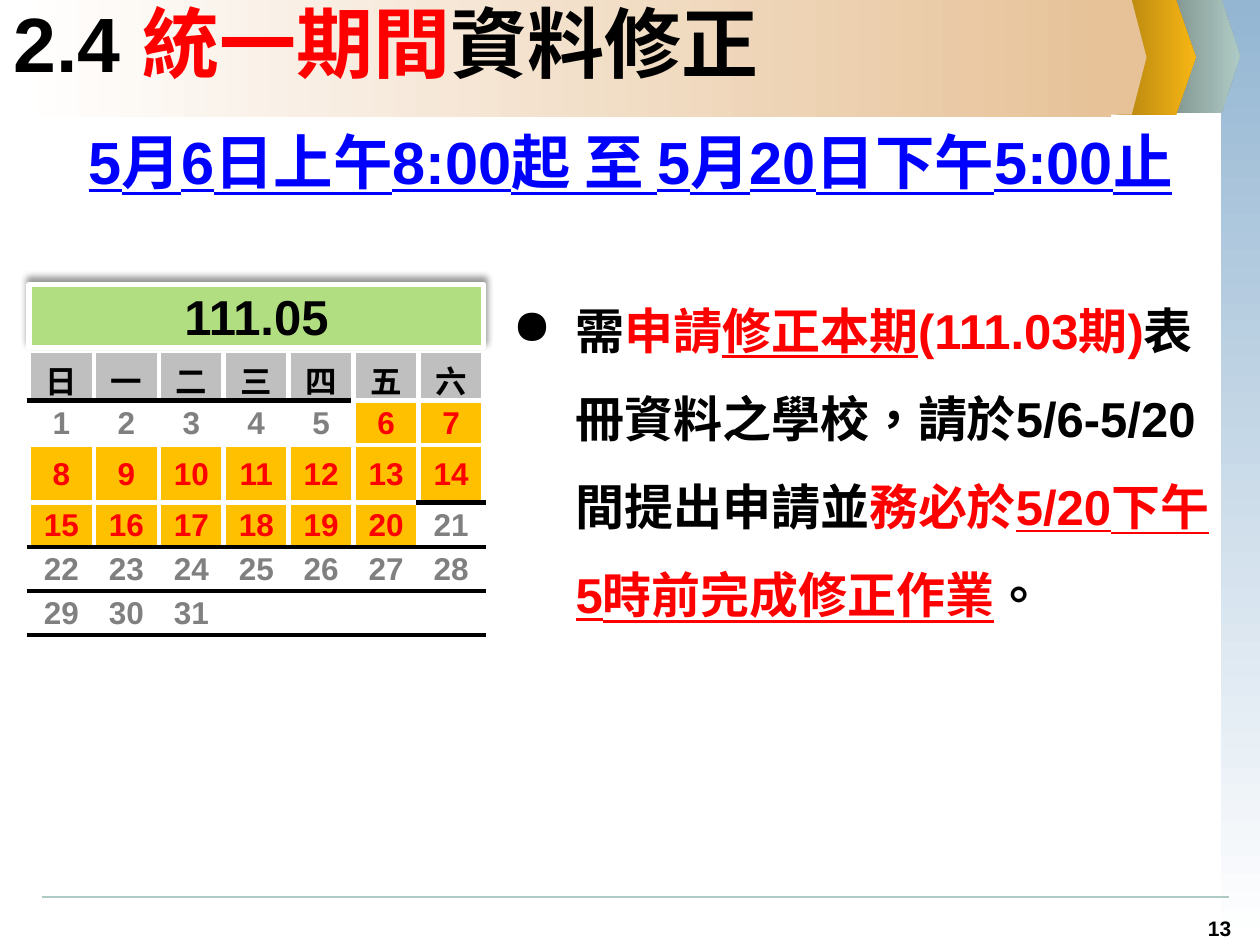
from lxml import etree
from pptx import Presentation
from pptx.dml.color import RGBColor
from pptx.enum.lang import MSO_LANGUAGE_ID as Lang
from pptx.enum.shapes import MSO_CONNECTOR as Connector, MSO_SHAPE as Shape
from pptx.enum.text import MSO_ANCHOR as Anchor, MSO_AUTO_SIZE as AutoSize, PP_ALIGN as Align
from pptx.oxml import parse_xml
from pptx.oxml.ns import nsdecls, qn
from pptx.util import Inches, Pt

BLACK, WHITE, RED, BLUE, GRAY = "000000", "FFFFFF", "FF0000", "0000FF", "808080"
PEACH, SAGE, AMBER, SILVER = "E7C298", "AFCAC4", "FFC000", "BFBFBF"
LATIN, CJK = "Arial", "Noto Sans CJK SC"


def rgb(color):
    return RGBColor.from_string(color)


def inches(box):
    return [Inches(length) for length in box]


def style_run(run, size, color, underline=False, latin=LATIN):
    font = run.font
    font.size, font.bold, font.underline = Pt(size), True, underline
    font.name, font.color.rgb = latin, rgb(color)
    font.language_id = Lang.TRADITIONAL_CHINESE
    east_asian = etree.SubElement(font._element, qn("a:ea"))
    east_asian.set("typeface", CJK)


def write(paragraph, pieces, size, align=Align.LEFT):
    """Add runs given as (text, color, underline)."""
    paragraph.alignment = align
    for words, color, underline in pieces:
        run = paragraph.add_run()
        run.text = words
        style_run(run, size, color, underline)


def add_text(slide, box, pieces, size, align=Align.LEFT, anchor=Anchor.TOP, grow=False):
    frame = slide.shapes.add_textbox(*inches(box)).text_frame
    frame.word_wrap, frame.vertical_anchor = True, anchor
    frame.auto_size = AutoSize.SHAPE_TO_FIT_TEXT if grow else AutoSize.NONE
    write(frame.paragraphs[0], pieces, size, align)
    return frame.paragraphs[0]


def add_panel(slide, box, colors, kind=Shape.RECTANGLE, angle=0):
    """Borderless shape with one solid color or a two-color gradient."""
    panel = slide.shapes.add_shape(kind, *inches(box))
    panel.shadow.inherit = False
    panel.line.fill.background()
    if kind == Shape.PENTAGON:
        panel.adjustments[0] = 0.25
    if len(colors) == 1:
        panel.fill.solid()
        panel.fill.fore_color.rgb = rgb(colors[0])
    else:
        panel.fill.gradient()
        panel.fill.gradient_angle = angle
        for stop, color, position in zip(panel.fill.gradient_stops, colors, (0, 1)):
            stop.color.rgb, stop.position = rgb(color), position
    return panel


def add_backdrop(slide):
    # Side band and footer rule
    add_panel(slide, (9.69, 0, 0.31, 7.5), ("94B6D2", WHITE), angle=270)
    rule = slide.shapes.add_connector(Connector.STRAIGHT, *inches((0.33, 7.12, 9.75, 7.12)))
    rule.line.color.rgb, rule.line.width = rgb(SAGE), Pt(0.75)
    etree.SubElement(rule._element.spPr, qn("a:effectLst"))
    # Title band ending in arrow-shaped tabs
    add_panel(slide, (9.25, -0.01, 0.59, 0.91), ("7D908C", SAGE), Shape.PENTAGON)
    add_panel(slide, (8.86, 0, 0.63, 0.91), ("B1820F", "F7B615"), Shape.PENTAGON)
    add_panel(slide, (0.12, 0, 8.7, 0.93), (WHITE, PEACH))
    add_panel(slide, (8.63, 0, 0.47, 0.91), (PEACH,), Shape.PENTAGON)
    add_text(slide, (9.36, 7.22, 0.64, 0.28), [("13", BLACK, False)], 12, Align.CENTER)


def add_instructions(slide, box):
    pieces = [
        ("需", BLACK, False), ("申請", RED, False), ("修正本期", RED, True),
        ("(111.03期)", RED, False),
        ("表冊資料之學校，請於5/6-5/20間提出申請並", BLACK, False),
        ("務必於", RED, False), ("5/20下午5時前完成修正作業", RED, True),
        ("。", BLACK, False),
    ]
    item = add_text(slide, box, pieces, 28, grow=True)
    item.line_spacing = 1.5
    properties = item._p.get_or_add_pPr()
    properties.set("marL", str(Inches(0.5)))
    properties.set("indent", str(Inches(-0.5)))
    etree.SubElement(properties, qn("a:buChar")).set("char", "●")


def set_borders(cell, top, bottom):
    properties = cell._tc.get_or_add_tcPr()
    sides = (("L", WHITE), ("R", WHITE), ("T", top), ("B", bottom))
    for index, (side, color) in enumerate(sides):
        properties.insert(index, parse_xml(
            f'<a:ln{side} {nsdecls("a")} w="{Pt(3)}"><a:solidFill>'
            f'<a:srgbClr val="{color}"/></a:solidFill></a:ln{side}>'))


def add_calendar(slide, box):
    left, top, width, height = box
    heights = (0.33, 0.35, 0.46, 0.35, 0.35, 0.35)
    days = [str(day) if day <= 31 else "" for day in range(1, 36)]
    weeks = [list("日一二三四五六")] + [days[i:i + 7] for i in range(0, 35, 7)]
    frame = slide.shapes.add_table(len(weeks), 7, *inches((left, top + 0.52, width, height - 0.52)))
    table = frame.table
    table.first_row = table.horz_banding = False
    for column in table.columns:
        column.width = Inches(width / 7)
    for row, row_height in zip(table.rows, heights):
        row.height = Inches(row_height)

    def is_open(day):
        return day.isdigit() and 6 <= int(day) <= 20

    def rule_above(row, column):
        """Black above every day outside the correction period and below the last week."""
        if row == 0 or (row < len(weeks) and is_open(weeks[row][column])):
            return WHITE
        return BLACK

    for r, week in enumerate(weeks):
        for c, day in enumerate(week):
            cell = table.cell(r, c)
            cell.vertical_anchor = Anchor.MIDDLE
            if r:
                cell.margin_left = cell.margin_right = cell.margin_top = Inches(0.01)
                cell.margin_bottom = 0
            if r == 0 or is_open(day):
                cell.fill.solid()
                cell.fill.fore_color.rgb = rgb(AMBER if r else SILVER)
            else:
                cell.fill.background()
            set_borders(cell, rule_above(r, c), rule_above(r + 1, c))
            cell.text_frame.text = day
            label = cell.text_frame.paragraphs[0]
            label.alignment = Align.CENTER
            color = BLACK if r == 0 else RED if is_open(day) else GRAY
            for run in label.runs:
                style_run(run, 18, color, latin=LATIN if r else CJK)

    # Month header with a shadow rising above it
    month = add_panel(slide, (left, top, width, 0.5), ("B2DE82",))
    month.line.color.rgb, month.line.width = rgb(WHITE), Pt(3)
    effects = month._element.spPr.find(qn("a:effectLst"))
    effects.append(parse_xml(
        f'<a:outerShdw {nsdecls("a")} blurRad="{Pt(4)}" dist="{Pt(3)}" dir="16200000" '
        f'rotWithShape="0"><a:srgbClr val="{BLACK}"><a:alpha val="40000"/></a:srgbClr></a:outerShdw>'))
    month.text_frame.vertical_anchor = Anchor.MIDDLE
    write(month.text_frame.paragraphs[0], [("111.05", BLACK, False)], 28, Align.CENTER)


def main():
    deck = Presentation()
    deck.slide_width, deck.slide_height = Inches(10), Inches(7.5)
    slide = deck.slides.add_slide(deck.slide_layouts[6])
    add_backdrop(slide)
    # Title and correction period
    title = [("2.4 ", BLACK, False), ("統一期間", RED, False), ("資料修正", BLACK, False)]
    add_text(slide, (0.01, 0, 7.76, 0.67), title, 44, anchor=Anchor.MIDDLE)
    period = [("5月6日上午8:00起 至 5月20日下午5:00止", BLUE, True)]
    add_text(slide, (0.08, 0.94, 9.85, 0.67), period, 34, Align.CENTER, grow=True)
    add_instructions(slide, (3.97, 2.1, 5.73, 2.84))
    add_calendar(slide, (0.23, 2.26, 3.61, 2.8))
    deck.save("out.pptx")


if __name__ == "__main__":
    main()
